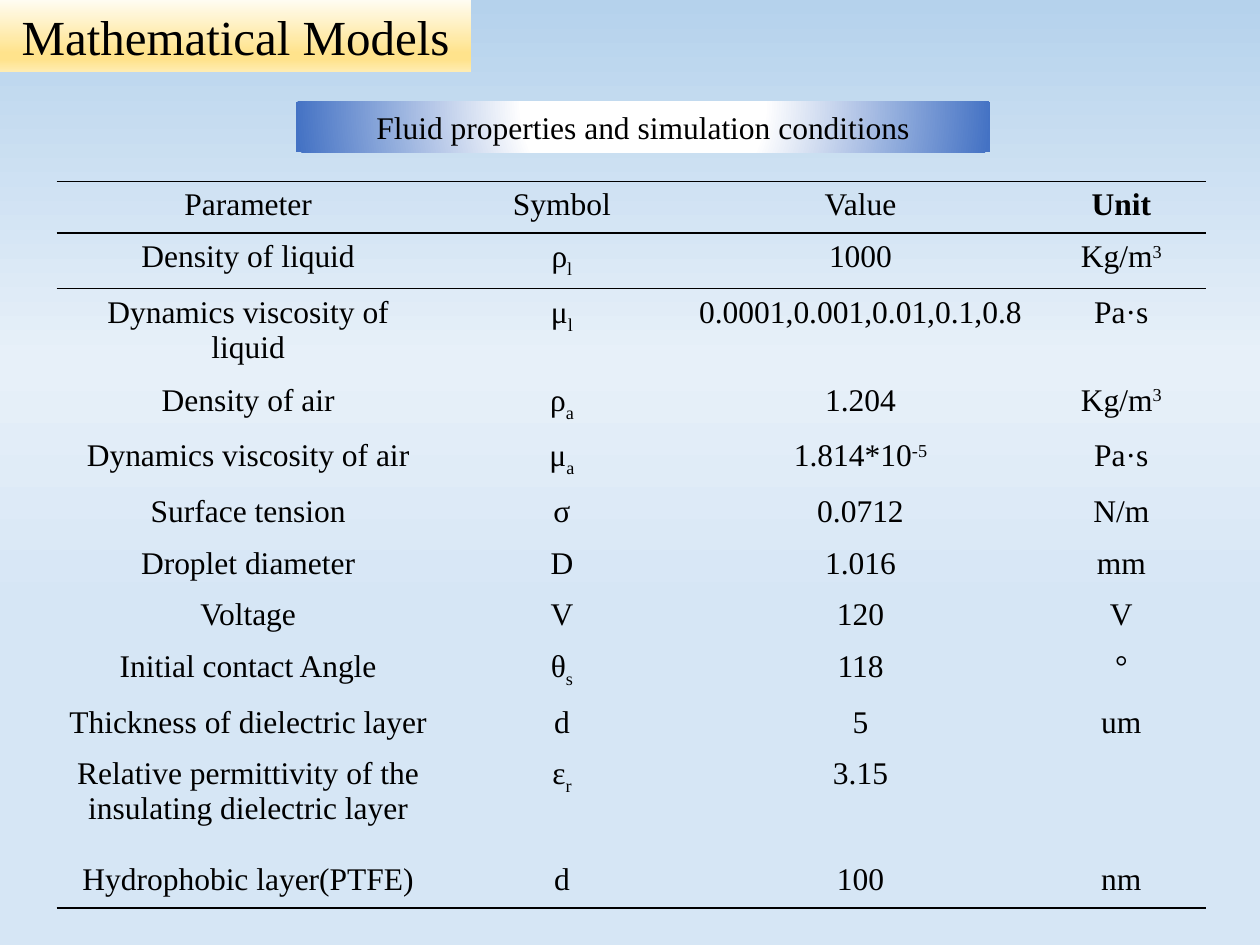
from lxml import etree
from pptx import Presentation
from pptx import util as u
from pptx.dml.color import RGBColor
from pptx.enum import shapes, text
from pptx.oxml.ns import qn


def rgb(value):
    return RGBColor.from_string(value)


def paint_gradient(fill, element, stops):
    fill.gradient()
    fill.gradient_angle = 270
    gradient = next(element.iter(qn("a:gradFill")))
    stop_list = gradient.find(qn("a:gsLst"))
    for stop in list(stop_list):
        stop_list.remove(stop)
    for percent, value in stops:
        stop = etree.SubElement(stop_list, qn("a:gs"), pos=str(percent * 1000))
        etree.SubElement(stop, qn("a:srgbClr"), val=value)
    return gradient


deck = Presentation()
deck.slide_width, deck.slide_height = u.Inches(10), u.Inches(7.5)
slide = deck.slides.add_slide(deck.slide_layouts[6])
paint_gradient(slide.background.fill, slide.element,
               [(0, "B5D2EC"), (38, "E7F0F9"), (65, "D6E6F5")])

banners = [
    ("Mathematical Models", 28, (0, 0, 3.74, 0.57),
     [(0, "FFFCF2"), (74, "FFE38C"), (83, "FFE38C"), (100, "FFECB2")]),
    ("Fluid properties and simulation conditions", 18, (2.35, 0.81, 5.51, 0.4),
     [(0, "FFFFFF"), (35, "FFFFFF"), (100, "4472C4")]),
]
for words, size, box, stops in banners:
    banner = slide.shapes.add_shape(shapes.MSO_SHAPE.RECTANGLE, *map(u.Inches, box))
    banner.shadow.inherit = False
    banner.line.fill.background()
    gradient = paint_gradient(banner.fill, banner.element, stops)
    banner.text_frame.auto_size = text.MSO_AUTO_SIZE.SHAPE_TO_FIT_TEXT
    line = banner.text_frame.paragraphs[0]
    line.alignment = text.PP_ALIGN.CENTER
    run = line.add_run()
    run.text = words
    for name, value in {"name": "Times New Roman", "size": u.Pt(size)}.items():
        setattr(run.font, name, value)
    run.font.color.rgb = rgb("000000")

gradient.remove(gradient.find(qn("a:lin")))
radial = etree.SubElement(gradient, qn("a:path"), path="circle")
etree.SubElement(radial, qn("a:fillToRect"), l="50000", t="-80000", r="50000", b="180000")

properties = [
    ("Parameter", "Symbol", "Value", "Unit"),
    ("Density of liquid", "ρ_l", "1000", "Kg/m^3"),
    ("Dynamics viscosity of liquid", "μ_l", "0.0001,0.001,0.01,0.1,0.8", "Pa·s"),
    ("Density of air", "ρ_a", "1.204", "Kg/m^3"),
    ("Dynamics viscosity of air", "μ_a", "1.814*10^-5", "Pa·s"),
    ("Surface tension", "σ", "0.0712", "N/m"),
    ("Droplet diameter", "D", "1.016", "mm"),
    ("Voltage", "V", "120", "V"),
    ("Initial contact Angle", "θ_s", "118", "°"),
    ("Thickness of dielectric layer", "d", "5", "um"),
    ("Relative permittivity of the insulating dielectric layer", "ε_r", "3.15", ""),
    ("Hydrophobic layer(PTFE)", "d", "100", "nm"),
]
last = len(properties) - 1
rules = {0: ("a:lnT", "a:lnB"), 1: ("a:lnT",), last: ("a:lnB",)}
baselines = {"_": "-25000", "^": "30000"}

frame = slide.shapes.add_table(len(properties), 4, u.Inches(0.45), u.Inches(1.44),
                               u.Inches(9.12), u.Inches(0.41 * len(properties)))
grid = frame.table
grid.first_row = grid.horz_banding = False
next(frame.element.iter(qn("a:tableStyleId"))).text = "{2D5ABB26-0587-4C30-8999-92F81FD0307C}"
for column, width in zip(grid.columns, (3.04, 1.94, 2.8, 1.34)):
    column.width = u.Inches(width)

for r, entries in enumerate(properties):
    grid.rows[r].height = u.Inches(0.41)
    for c, entry in enumerate(entries):
        cell = grid.cell(r, c)
        borders = cell._tc.get_or_add_tcPr()
        for side in rules.get(r, ()):
            rule = etree.SubElement(borders, qn(side), w=str(u.Pt(1)))
            solid = etree.SubElement(rule, qn("a:solidFill"))
            etree.SubElement(solid, qn("a:srgbClr"), val="000000")
        cell.fill.background()
        line = cell.text_frame.paragraphs[0]
        line.alignment = text.PP_ALIGN.CENTER
        if r == last:
            line.line_spacing = 1.5
        mark = next((m for m in baselines if m in entry), "_")
        base, _, script = entry.partition(mark)
        for words, offset in ((base, None), (script, baselines[mark])):
            if not words:
                continue
            run = line.add_run()
            run.text = words
            looks = {"name": "Times New Roman", "size": u.Pt(18), "bold": entry == "Unit"}
            for name, value in looks.items():
                setattr(run.font, name, value)
            run.font.color.rgb = rgb("000000")
            if offset:
                run._r.get_or_add_rPr().set("baseline", offset)

deck.save("out.pptx")
